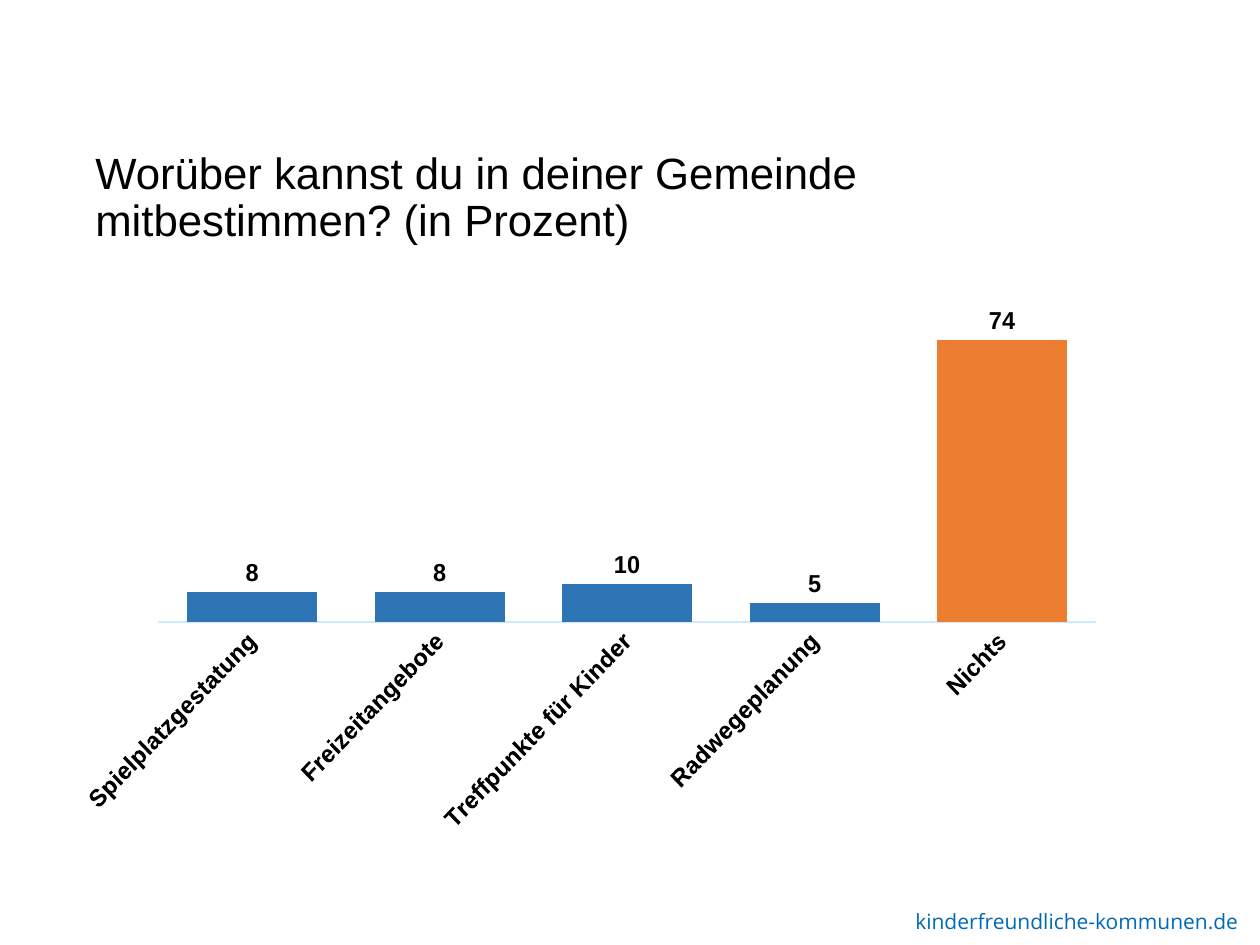
import dataclasses

import pptx
import pptx.chart.data
import pptx.dml.color
import pptx.enum.chart
import pptx.enum.text
import pptx.oxml
import pptx.oxml.ns
import pptx.util

PX = pptx.util.Inches(1) // 126


@dataclasses.dataclass(frozen=True)
class Theme:
    font: str = "Arial"
    footer_font: str = "Open Sans"
    text: str = "000000"
    footer: str = "0069B5"
    bar: str = "2E75B6"
    highlight: str = "ED7D31"
    axis: str = "CEEAFF"
    title_size: int = 25
    label_size: int = 14
    footer_size: int = 12


THEME = Theme()


def rgb(value):
    return pptx.dml.color.RGBColor.from_string(value)


def to_emu(box):
    return [length * PX for length in box]


def style_font(font, name, size, color, bold=False):
    font.name = name
    font.size = pptx.util.Pt(size)
    font.color.rgb = rgb(color)
    font.bold = bold


def add_text(slide, box, text, name, size, color, line_spacing=1.0):
    frame = slide.shapes.add_textbox(*to_emu(box)).text_frame
    frame.word_wrap = True
    frame.vertical_anchor = pptx.enum.text.MSO_ANCHOR.TOP
    paragraph = frame.paragraphs[0]
    paragraph.line_spacing = line_spacing
    run = paragraph.add_run()
    run.text = text
    style_font(run.font, name, size, color)


def set_plot_layout(chart, x, y, width, height):
    """Fix the inner plot area as fractions of the chart's box."""
    plot_area = chart.element.chart.plotArea
    for old in plot_area.findall(pptx.oxml.ns.qn("c:layout")):
        plot_area.remove(old)
    values = {"x": x, "y": y, "w": width, "h": height}
    sizes = "".join(f'<c:{key} val="{value}"/>' for key, value in values.items())
    plot_area.insert(0, pptx.oxml.parse_xml(
        f'<c:layout {pptx.oxml.ns.nsdecls("c")}><c:manualLayout>'
        '<c:layoutTarget val="inner"/><c:xMode val="edge"/><c:yMode val="edge"/>'
        f'{sizes}</c:manualLayout></c:layout>'))


def style_axes(chart):
    categories, values = chart.category_axis, chart.value_axis
    categories.major_tick_mark = pptx.enum.chart.XL_TICK_MARK.NONE
    categories.format.line.color.rgb = rgb(THEME.axis)
    categories.format.line.width = pptx.util.Pt(0.75)
    style_font(categories.tick_labels.font, THEME.font, THEME.label_size, THEME.text, True)
    body = categories._element.find(".//" + pptx.oxml.ns.qn("a:bodyPr"))
    body.set("rot", str(-45 * 60000))
    body.set("vert", "horz")
    values.minimum_scale, values.maximum_scale = 0, 80
    values.has_major_gridlines = False
    values.visible = False


def add_answer_chart(slide, box, answers):
    """Draw one column per answer, with the last one highlighted."""
    data = pptx.chart.data.CategoryChartData()
    data.categories = list(answers)
    data.add_series("Series 1", list(answers.values()))
    chart = slide.shapes.add_chart(
        pptx.enum.chart.XL_CHART_TYPE.COLUMN_CLUSTERED, *to_emu(box), data).chart
    chart.has_legend = False
    chart.has_title = False
    style_font(chart.font, THEME.font, THEME.label_size, THEME.text, True)
    set_plot_layout(chart, 0.03, 0.11, 0.9, 0.49)
    style_axes(chart)

    plot = chart.plots[0]
    plot.gap_width, plot.overlap = 44, 5
    plot.vary_by_categories = False
    series = plot.series[0]
    last_point = series.points[len(answers) - 1]
    for part, color in ((series, THEME.bar), (last_point, THEME.highlight)):
        part.format.fill.solid()
        part.format.fill.fore_color.rgb = rgb(color)

    labels = series.data_labels
    labels.show_value = True
    labels.position = pptx.enum.chart.XL_LABEL_POSITION.OUTSIDE_END
    style_font(labels.font, THEME.font, THEME.label_size, THEME.text, True)


def main():
    presentation = pptx.Presentation()
    presentation.slide_width, presentation.slide_height = 1260 * PX, 945 * PX
    slide = presentation.slides.add_slide(presentation.slide_layouts[6])
    add_text(slide, (903, 902, 369, 38), "kinderfreundliche-kommunen.de",
             THEME.footer_font, THEME.footer_size, THEME.footer)
    add_text(slide, (83, 145, 1086, 135),
             "Worüber kannst du in deiner Gemeinde mitbestimmen? (in Prozent)",
             THEME.font, THEME.title_size, THEME.text, line_spacing=0.9)
    add_answer_chart(slide, (83, 249, 1086, 622), {
        "Spielplatzgestatung": 8,
        "Freizeitangebote": 8,
        "Treffpunkte für Kinder": 10,
        "Radwegeplanung": 5,
        "Nichts": 74,
    })
    presentation.save("out.pptx")


if __name__ == "__main__":
    main()
